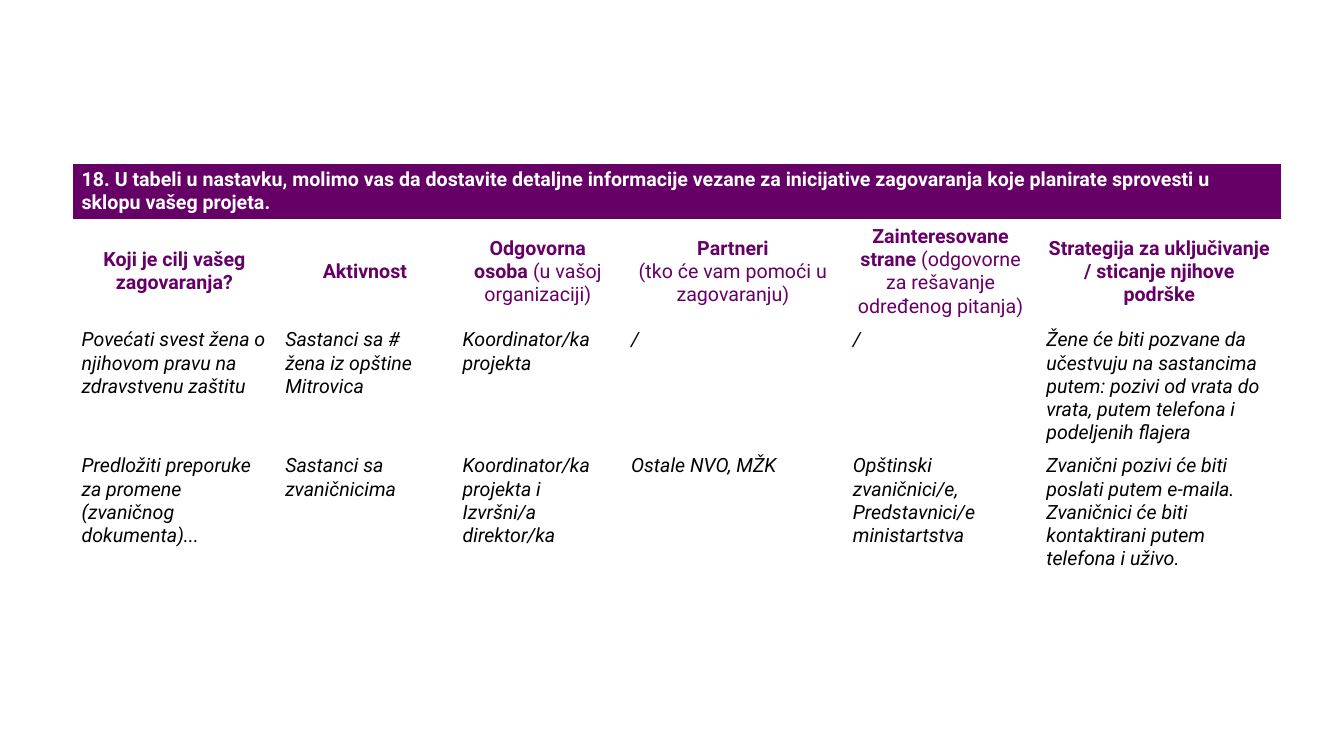
from lxml import etree
from pptx import Presentation
from pptx.dml.color import RGBColor
from pptx.enum import text
from pptx.oxml import ns
from pptx.util import Inches, Pt

PURPLE = RGBColor(0x66, 0x00, 0x66)
WHITE = RGBColor(0xFF, 0xFF, 0xFF)
BLACK = RGBColor(0x00, 0x00, 0x00)

COLS = [2.02, 1.76, 1.67, 2.2, 1.92, 2.42]
ROWS = [0.53, 1.03, 1.19, 1.19, 0.24, 0.24]

TITLE = ("18. U tabeli u nastavku, molimo vas da dostavite detaljne informacije "
         "vezane za inicijative zagovaranja koje planirate sprovesti u sklopu "
         "vašeg projeta.")

# Each heading is a list of paragraphs: (bold part, regular part)
HEADS = [
    [("Koji je cilj vašeg zagovaranja?", "")],
    [("Aktivnost", "")],
    [("Odgovorna osoba ", "(u vašoj organizaciji)")],
    [("Partneri", ""), ("", "(tko će vam pomoći u zagovaranju)")],
    [("Zainteresovane strane ", "(odgovorne za rešavanje određenog pitanja)")],
    [("Strategija za uključivanje / sticanje njihove podrške", "")],
]

BODY = [
    ["Povećati svest žena o njihovom pravu na zdravstvenu zaštitu",
     "Sastanci sa # žena iz opštine Mitrovica",
     "Koordinator/ka projekta",
     "/",
     "/",
     "Žene će biti pozvane da učestvuju na sastancima putem: pozivi od vrata "
     "do vrata, putem telefona i podeljenih flajera"],
    ["Predložiti preporuke za promene (zvaničnog dokumenta)...",
     "Sastanci sa zvaničnicima",
     "Koordinator/ka projekta i Izvršni/a direktor/ka",
     "Ostale NVO, MŽK",
     "Opštinski zvaničnici/e, Predstavnici/e ministartstva",
     "Zvanični pozivi će biti poslati putem e-maila. Zvaničnici će biti "
     "kontaktirani putem telefona i uživo."],
]


def style(para, color, bold=None, italic=None):
    font = para.font
    font.name, font.size = "Roboto", Pt(14)
    font.color.rgb = color
    font.bold, font.italic = bold, italic


def border(cell):
    props = cell._tc.get_or_add_tcPr()
    for spot, side in enumerate(("lnL", "lnR", "lnT", "lnB")):
        line = etree.Element(ns.qn("a:" + side), w=str(Pt(0.6)))
        fill = etree.SubElement(line, ns.qn("a:solidFill"))
        etree.SubElement(fill, ns.qn("a:srgbClr"), val=str(WHITE))
        props.insert(spot, line)


def add_grid(slide):
    frame = slide.shapes.add_table(len(ROWS), len(COLS), Inches(0.72), Inches(1.62),
                                   Inches(sum(COLS)), Inches(sum(ROWS)))
    table = frame.table
    table.first_row = table.horz_banding = False
    for col, width in zip(table.columns, COLS):
        col.width = Inches(width)
    for row, height in zip(table.rows, ROWS):
        row.height = Inches(height)
    for cell in table.iter_cells():
        cell.margin_left = cell.margin_right = Inches(0.09)
        cell.margin_top = cell.margin_bottom = Inches(0.05)
        cell.fill.background()
        border(cell)
        style(cell.text_frame.paragraphs[0], BLACK)
    return table


def fill_title(table):
    cell = table.cell(0, 0)
    cell.merge(table.cell(0, len(COLS) - 1))
    cell.fill.solid()
    cell.fill.fore_color.rgb = PURPLE
    cell.text = TITLE
    style(cell.text_frame.paragraphs[0], WHITE, bold=True)


def fill_head(cell, lines):
    cell.vertical_anchor = text.MSO_ANCHOR.MIDDLE
    frame = cell.text_frame
    for i, parts in enumerate(lines):
        para = frame.add_paragraph() if i else frame.paragraphs[0]
        para.alignment = text.PP_ALIGN.CENTER
        style(para, PURPLE)
        for part, bold in zip(parts, (True, False)):
            if part:
                run = para.add_run()
                run.text = part
                run.font.bold = bold


def fill_body(cell, words):
    cell.text = words
    style(cell.text_frame.paragraphs[0], BLACK, italic=True)


def main():
    prs = Presentation()
    prs.slide_width, prs.slide_height = Inches(13.33), Inches(7.5)
    slide = prs.slides.add_slide(prs.slide_layouts[6])

    # Table frame and title bar
    table = add_grid(slide)
    fill_title(table)

    # Column headings
    for c, lines in enumerate(HEADS):
        fill_head(table.cell(1, c), lines)

    # Example rows
    for r, row in enumerate(BODY, 2):
        for c, words in enumerate(row):
            fill_body(table.cell(r, c), words)

    prs.save("out.pptx")


if __name__ == "__main__":
    main()
